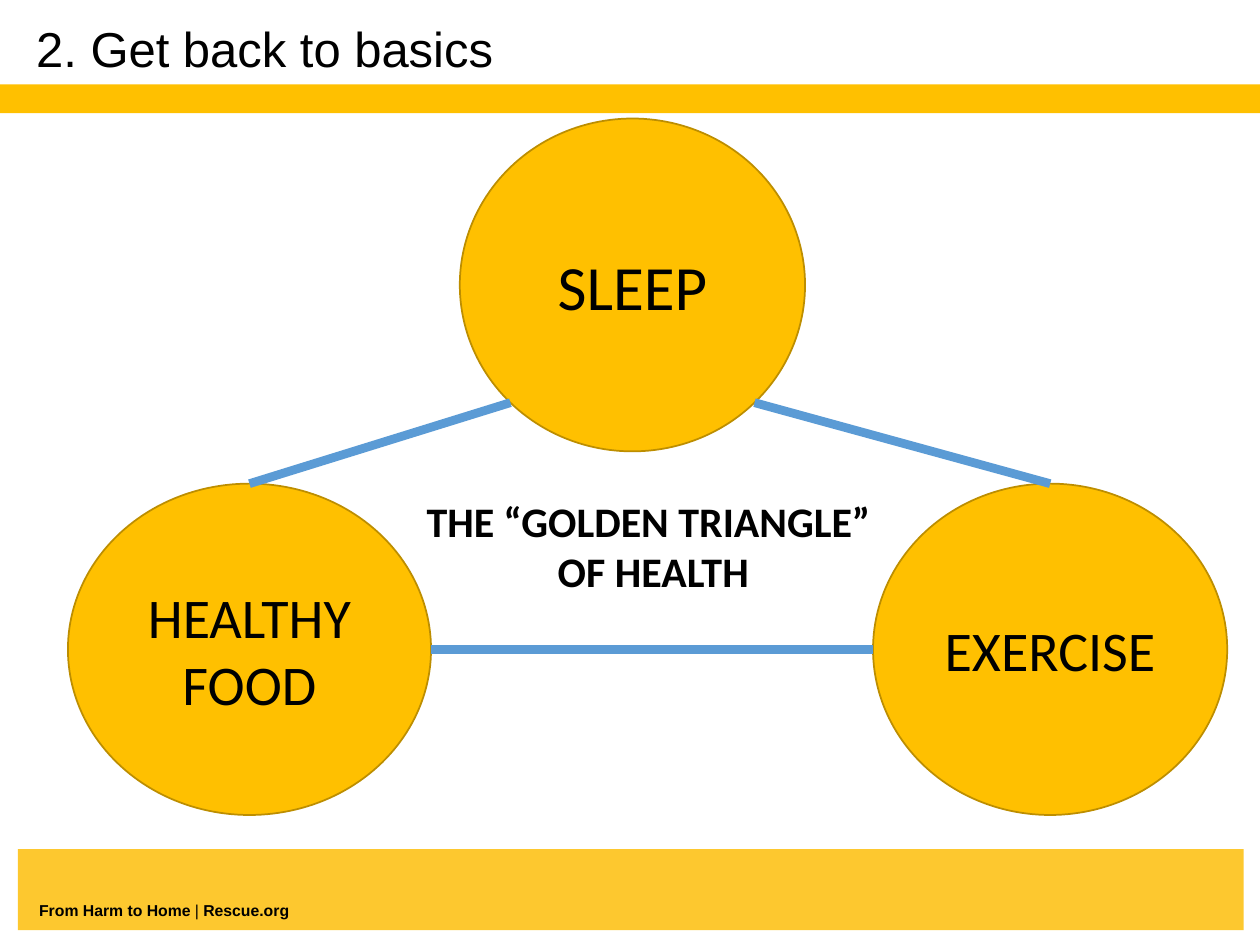
"""Build the "Get back to basics" slide with the golden triangle of health."""
from math import cos, pi, sin

from lxml import etree
from pptx import Presentation
from pptx import util as u
from pptx.dml.color import RGBColor
from pptx.enum import shapes, text
from pptx.oxml.ns import qn

GOLD = RGBColor(0xFF, 0xC0, 0x00)
FOOTER_GOLD = RGBColor(0xFD, 0xC8, 0x2F)
OUTLINE = RGBColor(0xBD, 0x8E, 0x00)
BLUE = RGBColor(0x5B, 0x9B, 0xD5)
BLACK = RGBColor(0x00, 0x00, 0x00)

BARS = [
    ((0.36, 17.12, 24.71, 1.63), FOOTER_GOLD),
    ((0, 1.7, 25.4, 0.58), GOLD),
]
FOOTER = [[("From Harm to Home ", True), ("|", False), (" Rescue.org", True)]]
TITLE = [[("2. Get back to basics", False)]]
CAPTION = [[("THE “GOLDEN TRIANGLE” ", True)], [("OF HEALTH", True)]]
CIRCLES = {
    "sleep": ((9.27, 2.39, 6.96, 6.71), ["SLEEP"], 36),
    "exercise": ((17.6, 9.75, 7.14, 6.68), ["EXERCISE"], 32),
    "food": ((1.37, 9.75, 7.32, 6.68), ["HEALTHY", "FOOD"], 32),
}
SIDES = [
    ("food", 0, "exercise", 180),
    ("sleep", 45, "exercise", 270),
    ("sleep", 135, "food", 270),
]


def cm(values):
    return [u.Cm(v) for v in values]


def write(tf, paragraphs, size, font, align=None, spacing=None):
    tf.word_wrap = True
    for i, runs in enumerate(paragraphs):
        p = tf.add_paragraph() if i else tf.paragraphs[0]
        p.alignment = align
        p.line_spacing = spacing
        for words, bold in runs:
            r = p.add_run()
            r.text = words
            r.font.size = u.Pt(size)
            r.font.name = font
            r.font.bold = bold
            r.font.color.rgb = BLACK


def add_filled(s, kind, box, color):
    sp = s.shapes.add_shape(kind, *cm(box))
    sp.shadow.inherit = False
    sp.fill.solid()
    sp.fill.fore_color.rgb = color
    sp.line.fill.background()
    return sp


def add_text(s, box, *content):
    tf = s.shapes.add_textbox(*cm(box)).text_frame
    write(tf, *content)
    return tf


def add_circle(s, box, lines, size):
    sp = add_filled(s, shapes.MSO_SHAPE.OVAL, box, GOLD)
    sp.line.color.rgb = OUTLINE
    sp.line.width = u.Pt(1)
    sp.text_frame.vertical_anchor = text.MSO_ANCHOR.MIDDLE
    write(sp.text_frame, [[(line, False)] for line in lines], size, "Calibri",
          text.PP_ALIGN.CENTER)


def rim_point(name, degrees):
    x, y, w, h = CIRCLES[name][0]
    a = degrees * pi / 180
    return x + w / 2 * (1 + cos(a)), y + h / 2 * (1 + sin(a))


def add_side(s, start, start_angle, end, end_angle):
    ends = rim_point(start, start_angle) + rim_point(end, end_angle)
    line = s.shapes.add_connector(shapes.MSO_CONNECTOR.STRAIGHT, *cm(ends))
    line.line.color.rgb = BLUE
    line.line.width = u.Pt(5)
    etree.SubElement(line._element.spPr, qn("a:effectLst"))


def main():
    prs = Presentation()
    prs.slide_width, prs.slide_height = cm((25.4, 19.05))
    s = prs.slides.add_slide(prs.slide_layouts[6])
    for box, color in BARS:
        add_filled(s, shapes.MSO_SHAPE.RECTANGLE, box, color)
    tf = add_text(s, (0.79, 18.16, 8.26, 0.38), FOOTER, 9, "Arial")
    tf.margin_left = tf.margin_right = tf.margin_top = tf.margin_bottom = 0
    tf.vertical_anchor = text.MSO_ANCHOR.BOTTOM
    add_text(s, (0.48, 0.38, 21.89, 1.7), TITLE, 28, "Arial", None, 0.9)
    for circle in CIRCLES.values():
        add_circle(s, *circle)
    for side in SIDES:
        add_side(s, *side)
    add_text(s, (8.28, 9.86, 9.78, 2.31), CAPTION, 24, "Calibri",
             text.PP_ALIGN.CENTER)
    prs.save("out.pptx")


if __name__ == "__main__":
    main()
